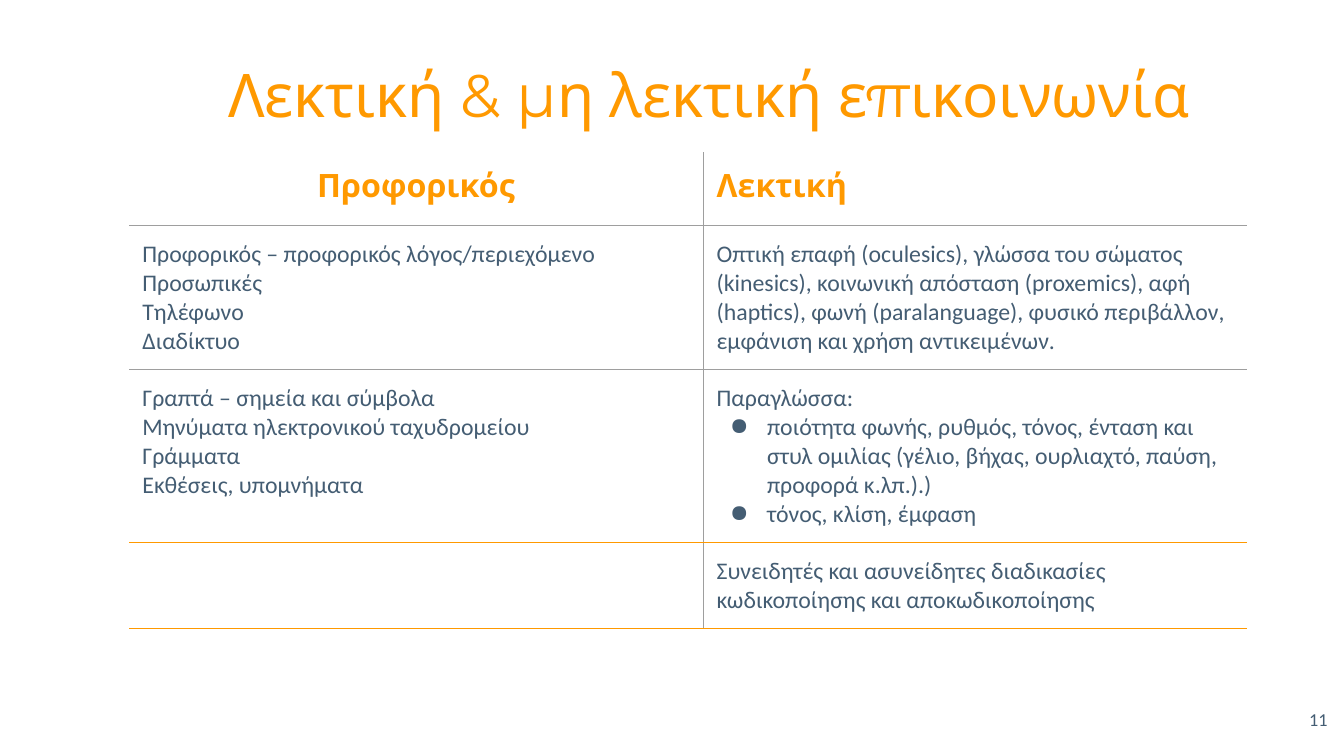
"""Build the slide comparing verbal and non-verbal communication."""
from lxml.etree import SubElement
from pptx import Presentation
from pptx.dml.color import RGBColor
from pptx.enum.text import MSO_ANCHOR as Anchor, PP_ALIGN as Align
from pptx.oxml import parse_xml
from pptx.oxml.ns import nsdecls, qn
from pptx.util import Pt

ORANGE, SLATE, GRAY = "FF9900", "445D73", "9E9E9E"
NO_STYLE = "{2D5ABB26-0587-4C30-8999-92F81FD0307C}"


def write(frame, text, size=17, font="Calibri", color=SLATE, bold=False,
          align=Align.LEFT, anchor=Anchor.TOP, margins=(9.5, 10)):
    """Fill a frame; list items are paragraphs, and a leading bullet marks a list."""
    frame.word_wrap = True
    frame.vertical_anchor = anchor
    frame.margin_left = frame.margin_right = Pt(margins[0])
    frame.margin_top = frame.margin_bottom = Pt(margins[1])
    for index, line in enumerate(text):
        paragraph = frame.add_paragraph() if index else frame.paragraphs[0]
        paragraph.alignment = align
        paragraph.text = line.removeprefix("●")
        if line.startswith("●"):
            properties = paragraph._p.get_or_add_pPr()
            properties.set("marL", str(Pt(36)))
            properties.set("indent", str(Pt(-26.6)))
            bullet_color = SubElement(properties, qn("a:buClr"))
            SubElement(bullet_color, qn("a:srgbClr"), val=color)
            SubElement(properties, qn("a:buChar"), char="●")
        for run in paragraph.runs:
            run.font.size = Pt(size)
            run.font.name = font
            run.font.bold = bold
            run.font.color.rgb = RGBColor.from_string(color)
        for line_break in paragraph._p.findall(qn("a:br")):
            SubElement(line_break, qn("a:rPr"), sz=str(size * 100))


def set_borders(cell, **colors):
    """Draw the given sides of a cell, in the order left, right, top, bottom."""
    properties = cell._tc.get_or_add_tcPr()
    for index, (side, color) in enumerate(colors.items()):
        properties.insert(index, parse_xml(
            f'<a:{side} {nsdecls("a")} w="{Pt(0.75)}"><a:solidFill>'
            f'<a:srgbClr val="{color}"/></a:solidFill></a:{side}>'))


presentation = Presentation()
presentation.slide_width, presentation.slide_height = Pt(960), Pt(540)
slide = presentation.slides.add_slide(presentation.slide_layouts[6])

title = slide.shapes.add_textbox(Pt(122.4), Pt(36.7), Pt(768.2), Pt(59.8))
write(title.text_frame, ["Λεκτική & μη λεκτική επικοινωνία"], size=43, font="Montserrat",
      color=ORANGE, align=Align.CENTER, anchor=Anchor.MIDDLE, margins=(10, 10))

heading = {"size": 23, "font": "Montserrat", "color": ORANGE, "bold": True}
rows = [
    (["Προφορικός"], ["Λεκτική"]),
    (["Προφορικός – προφορικός λόγος/περιεχόμενο\vΠροσωπικές\vΤηλέφωνο\vΔιαδίκτυο"],
     ["Οπτική επαφή (oculesics), γλώσσα του σώματος (kinesics), κοινωνική απόσταση "
      "(proxemics), αφή (haptics), φωνή (paralanguage), φυσικό περιβάλλον, "
      "εμφάνιση και χρήση αντικειμένων."]),
    (["Γραπτά – σημεία και σύμβολα\vΜηνύματα ηλεκτρονικού ταχυδρομείου\v"
      "Γράμματα\vΕκθέσεις, υπομνήματα"],
     ["Παραγλώσσα:",
      "●ποιότητα φωνής, ρυθμός, τόνος, ένταση και στυλ ομιλίας (γέλιο, βήχας, "
      "ουρλιαχτό, παύση, προφορά κ.λπ.).)",
      "●τόνος, κλίση, έμφαση"]),
    ([], ["Συνειδητές και ασυνείδητες διαδικασίες κωδικοποίησης και αποκωδικοποίησης"]),
]
row_heights = [52.5, 102.9, 123.5, 61.5]
column_widths = [410.2, 388.3]
row_lines = [GRAY, GRAY, ORANGE, ORANGE]

table_frame = slide.shapes.add_table(len(rows), 2, Pt(92.2), Pt(108.7),
                                     Pt(sum(column_widths)), Pt(sum(row_heights)))
table = table_frame.table
table.first_row = table.horz_banding = False
table._tbl.tblPr.find(qn("a:tableStyleId")).text = NO_STYLE
for column, width in zip(table.columns, column_widths):
    column.width = Pt(width)

for row_index, texts in enumerate(rows):
    table.rows[row_index].height = Pt(row_heights[row_index])
    for column_index, text in enumerate(texts):
        cell = table.cell(row_index, column_index)
        cell.fill.background()
        cell.margin_left = cell.margin_right = Pt(9.5)
        cell.margin_top = cell.margin_bottom = Pt(10)
        style = heading if row_index == 0 else {}
        align = Align.CENTER if row_index == column_index == 0 else Align.LEFT
        write(cell.text_frame, text, align=align, **style)
        sides = {"lnL" if column_index else "lnR": GRAY}
        if row_index:
            sides["lnT"] = row_lines[row_index - 1]
        set_borders(cell, **sides, lnB=row_lines[row_index])

number = slide.shapes.add_textbox(Pt(897.8), Pt(499), Pt(57.6), Pt(41))
write(number.text_frame, ["11"], size=13, align=Align.RIGHT, margins=(7.2, 7.2))

presentation.save("out.pptx")
